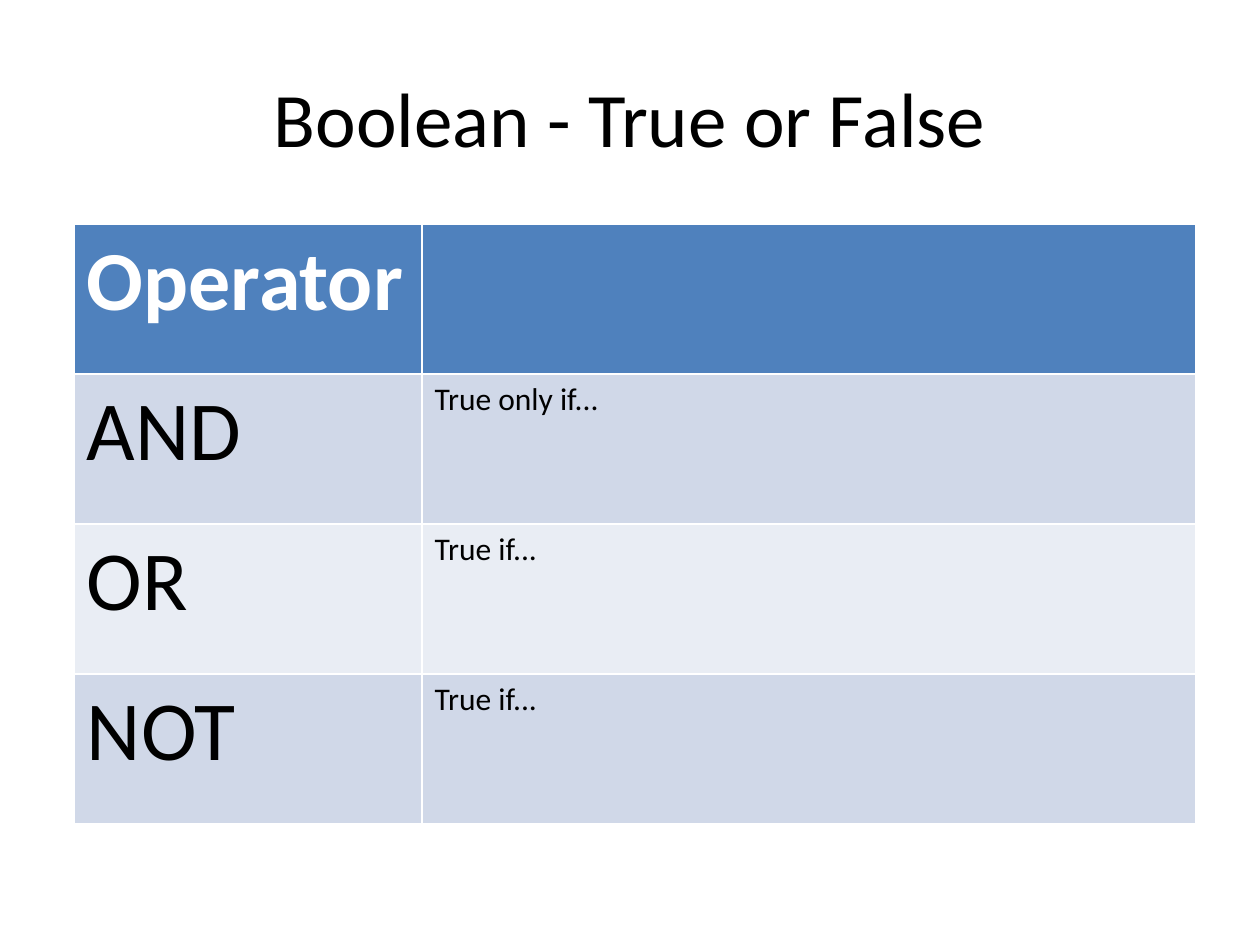
from pptx import Presentation
from pptx.dml.color import RGBColor
from pptx.enum.text import MSO_ANCHOR, PP_ALIGN
from pptx.util import Inches, Pt

CENTER, LEFT = PP_ALIGN.CENTER, PP_ALIGN.LEFT
MIDDLE = MSO_ANCHOR.MIDDLE

TITLE = "Boolean - True or False"
OPERATORS = [
    ("Operator", ""),
    ("AND", "True only if..."),
    ("OR", "True if..."),
    ("NOT", "True if..."),
]
COLORS = {
    "text": "000000",
    "header_text": "FFFFFF",
    "header": "4F81BD",
    "odd_row": "D0D8E8",
    "even_row": "E9EDF4",
}
FONT = "Calibri"
COLUMN_WIDTHS = (2.76, 6.14)
COLUMN_SIZES = (48, 18)
ROW_HEIGHT = 1.19


def write(frame, text, size, color="text", bold=False, align=LEFT):
    paragraph = frame.paragraphs[0]
    paragraph.alignment = align
    paragraph.font.size = Pt(size)
    if not text:
        return
    run = paragraph.add_run()
    run.text = text
    run.font.name = FONT
    run.font.size = Pt(size)
    run.font.bold = bold
    run.font.color.rgb = RGBColor.from_string(COLORS[color])


def row_fill(row):
    if row == 0:
        return "header"
    return "odd_row" if row % 2 else "even_row"


def main():
    deck = Presentation()
    deck.slide_width, deck.slide_height = Inches(10), Inches(7.5)
    slide = deck.slides.add_slide(deck.slide_layouts[5])

    title = slide.shapes.title
    title.left, title.top = Inches(0.5), Inches(0.3)
    title.width, title.height = Inches(9), Inches(1.25)
    title.text_frame.vertical_anchor = MIDDLE
    write(title.text_frame, TITLE, 44, align=CENTER)

    table = slide.shapes.add_table(
        len(OPERATORS), len(COLUMN_WIDTHS), Inches(0.59), Inches(1.78),
        Inches(sum(COLUMN_WIDTHS)), Inches(ROW_HEIGHT * len(OPERATORS)),
    ).table
    for column, width in zip(table.columns, COLUMN_WIDTHS):
        column.width = Inches(width)

    for row, entries in enumerate(OPERATORS):
        table.rows[row].height = Inches(ROW_HEIGHT)
        is_header = row == 0
        for column, entry in enumerate(entries):
            cell = table.cell(row, column)
            cell.fill.solid()
            cell.fill.fore_color.rgb = RGBColor.from_string(COLORS[row_fill(row)])
            write(cell.text_frame, entry, COLUMN_SIZES[column], bold=is_header,
                  color="header_text" if is_header else "text")

    deck.save("out.pptx")


if __name__ == "__main__":
    main()
